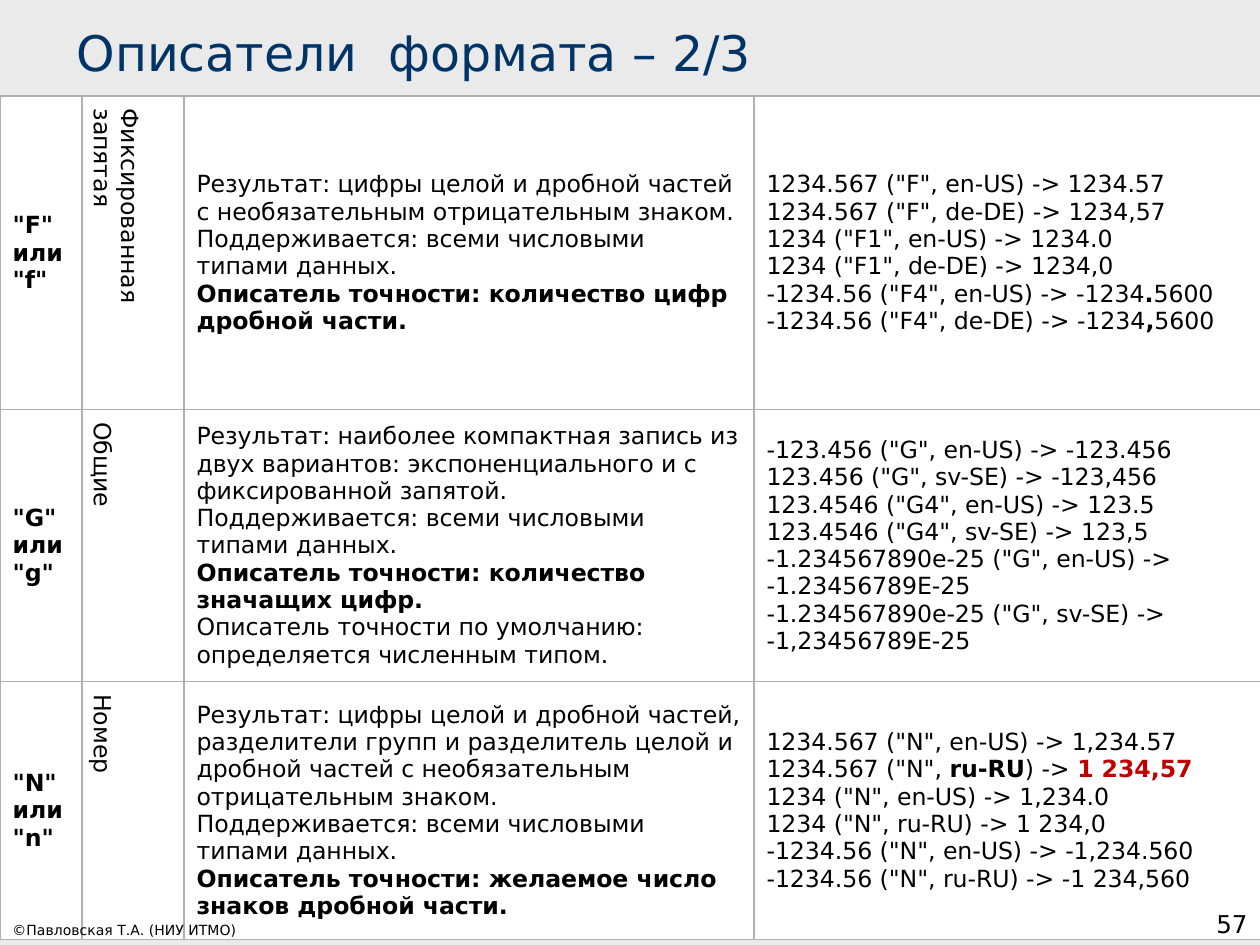
"""Build the slide on numeric format specifiers."""
from lxml import etree
from pptx import Presentation
from pptx.dml.color import RGBColor
from pptx.enum.text import MSO_ANCHOR, PP_ALIGN
from pptx.oxml.ns import qn
from pptx.util import Pt

PX = 914400 / 126
FONT = "DejaVu Sans"
BACK = RGBColor(0xEA, 0xEA, 0xEA)
NAVY = RGBColor(0x00, 0x33, 0x66)
BLACK = RGBColor(0x00, 0x00, 0x00)
WHITE = RGBColor(0xFF, 0xFF, 0xFF)
RED = RGBColor(0xC0, 0x00, 0x00)
GREY = RGBColor(0xB0, 0xB0, 0xB0)
LEFT, RIGHT = PP_ALIGN.LEFT, PP_ALIGN.RIGHT
MIDDLE, BOTTOM = MSO_ANCHOR.MIDDLE, MSO_ANCHOR.BOTTOM

COLS = [82, 102, 570, 532]
ROWS = [287, 272, 258]
TYPES = "Поддерживается: всеми числовыми типами данных."


def bold(text, color=BLACK):
    return text, True, color


CELLS = [
    [
        [[bold('"F" или "f"')]],
        ["Фиксированная запятая"],
        [
            "Результат: цифры целой и дробной частей с необязательным отрицательным знаком.",
            TYPES,
            [bold("Описатель точности: количество цифр дробной части.")],
        ],
        [
            '1234.567 ("F", en-US) -> 1234.57',
            '1234.567 ("F", de-DE) -> 1234,57',
            '1234 ("F1", en-US) -> 1234.0',
            '1234 ("F1", de-DE) -> 1234,0',
            ['-1234.56 ("F4", en-US) -> -1234', bold("."), "5600"],
            ['-1234.56 ("F4", de-DE) -> -1234', bold(","), "5600"],
        ],
    ],
    [
        [[bold('"G" или "g"')]],
        ["Общие"],
        [
            "Результат: наиболее компактная запись из двух вариантов: "
            "экспоненциального и с фиксированной запятой.",
            TYPES,
            [bold("Описатель точности: количество значащих цифр.")],
            "Описатель точности по умолчанию: определяется численным типом.",
        ],
        [
            '-123.456 ("G", en-US) -> -123.456',
            '123.456 ("G", sv-SE) -> -123,456',
            '123.4546 ("G4", en-US) -> 123.5',
            '123.4546 ("G4", sv-SE) -> 123,5',
            '-1.234567890e-25 ("G", en-US) -> -1.23456789E-25',
            '-1.234567890e-25 ("G", sv-SE) -> -1,23456789E-25',
        ],
    ],
    [
        [[bold('"N" или "n"')]],
        ["Номер"],
        [
            "Результат: цифры целой и дробной частей, разделители групп и разделитель "
            "целой и дробной частей с необязательным отрицательным знаком.",
            TYPES,
            [bold("Описатель точности: желаемое число знаков дробной части.")],
        ],
        [
            '1234.567 ("N", en-US) -> 1,234.57',
            ['1234.567 ("N", ', bold("ru-RU"), ") -> ", bold("1 234,57", RED)],
            '1234 ("N", en-US) -> 1,234.0',
            '1234 ("N", ru-RU) -> 1 234,0',
            '-1234.56 ("N", en-US) -> -1,234.560',
            '-1234.56 ("N", ru-RU) -> -1 234,560',
        ],
    ],
]


def px(num):
    """Turn pixels into EMU."""
    return round(num * PX)


def style(font, size, color):
    """Set the face, size and colour of a font."""
    font.name = FONT
    font.size = Pt(size)
    font.color.rgb = color


def write(shape, text, size, color, align=LEFT):
    """Put one line of text at the bottom of a shape."""
    frame = shape.text_frame
    frame.word_wrap = True
    frame.vertical_anchor = BOTTOM
    para = frame.paragraphs[0]
    para.text = text
    para.alignment = align
    style(para.font, size, color)


def add_title(slide, text):
    """Place and fill the title."""
    title = slide.shapes.title
    title.left, title.top, title.width, title.height = map(px, (64, 16, 1181, 72))
    write(title, text, 28, NAVY)


def add_note(slide, box, text, size, align=LEFT):
    """Add a line of footer text."""
    shape = slide.shapes.add_textbox(*map(px, box))
    write(shape, text, size, BLACK, align)


def add_edges(cell):
    """Draw a thin grey line on each side of a cell."""
    props = cell._tc.get_or_add_tcPr()
    for side in ("lnL", "lnR", "lnT", "lnB"):
        line = etree.SubElement(props, qn(f"a:{side}"), w=str(Pt(1)))
        fill = etree.SubElement(line, qn("a:solidFill"))
        etree.SubElement(fill, qn("a:srgbClr"), val=str(GREY))


def fill_cell(cell, paras):
    """Format a cell and write its paragraphs."""
    add_edges(cell)
    cell.fill.solid()
    cell.fill.fore_color.rgb = WHITE
    cell.vertical_anchor = MIDDLE
    frame = cell.text_frame
    for num, runs in enumerate(paras):
        para = frame.add_paragraph() if num else frame.paragraphs[0]
        style(para.font, 13.5, BLACK)
        for item in [runs] if isinstance(runs, str) else runs:
            text, heavy, color = (item, False, BLACK) if isinstance(item, str) else item
            run = para.add_run()
            run.text = text
            run.font.bold = heavy
            style(run.font, 13.5, color)


def add_grid(slide):
    """Add the table of format specifiers."""
    box = map(px, (0, 96, sum(COLS), sum(ROWS)))
    table = slide.shapes.add_table(len(ROWS), len(COLS), *box).table
    table.first_row = table.horz_banding = False
    for col, width in zip(table.columns, COLS):
        col.width = px(width)
    for row, height, line in zip(table.rows, ROWS, CELLS):
        row.height = px(height)
        for cell, paras in zip(row.cells, line):
            fill_cell(cell, paras)
        row.cells[1]._tc.get_or_add_tcPr().set("vert", "vert")


def main():
    """Build and save the slide."""
    deck = Presentation()
    deck.slide_width, deck.slide_height = px(1260), px(945)
    slide = deck.slides.add_slide(deck.slide_layouts[5])
    slide.background.fill.solid()
    slide.background.fill.fore_color.rgb = BACK
    add_title(slide, "Описатели  формата – 2/3")
    add_grid(slide)
    add_note(slide, (0, 910, 392, 35), "©Павловская Т.А. (НИУ ИТМО)", 8)
    add_note(slide, (998, 882, 262, 63), "57", 14, RIGHT)
    deck.save("out.pptx")


if __name__ == "__main__":
    main()
